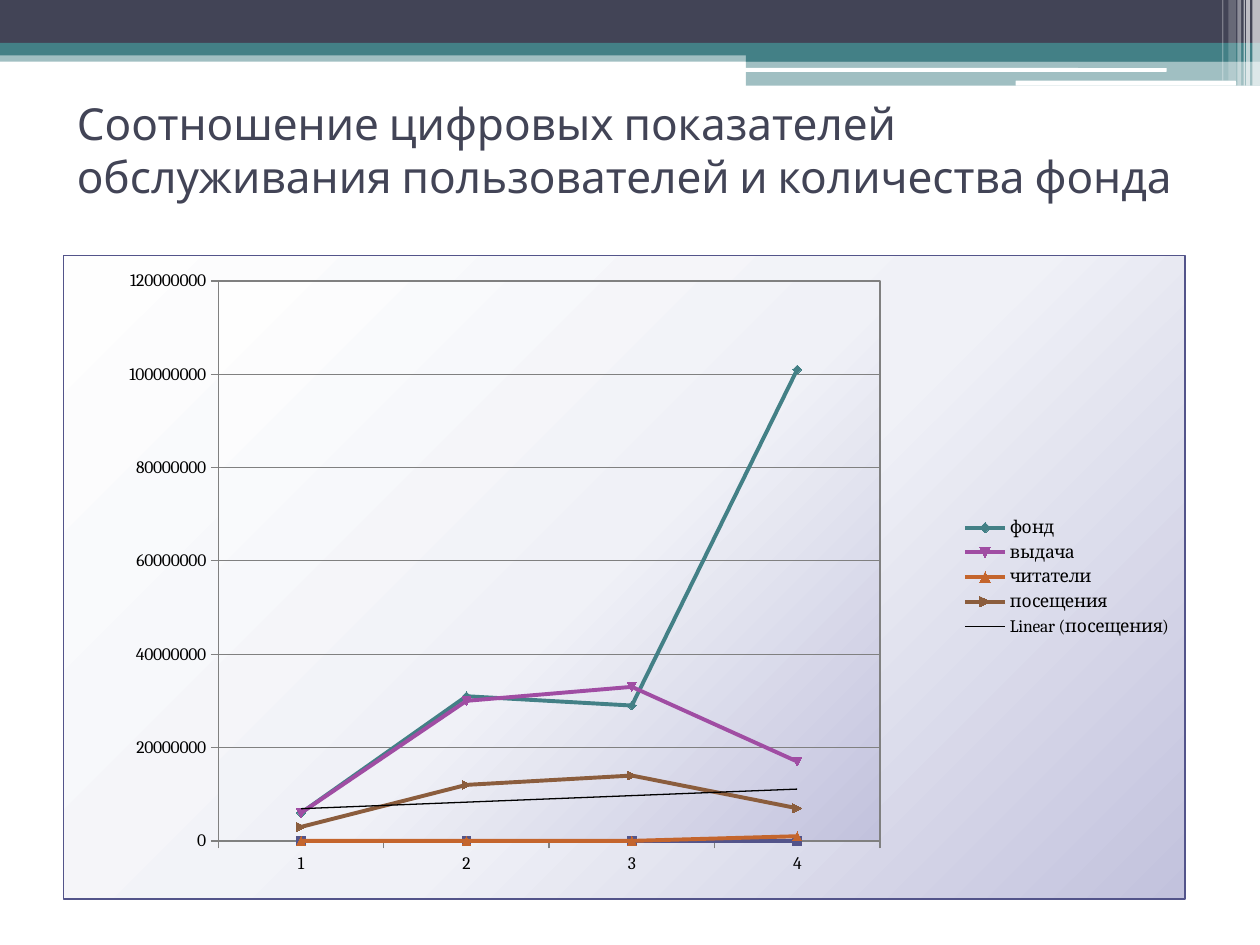
import pptx
import pptx.chart.data
import pptx.dml.color
import pptx.enum.chart
import pptx.enum.shapes
import pptx.enum.text
import pptx.oxml
import pptx.oxml.ns
import pptx.util
from pptx.util import Inches

NS = pptx.oxml.ns.nsdecls("a", "c")
qn = pptx.oxml.ns.qn


def rgb(hex_code):
    return pptx.dml.color.RGBColor.from_string(hex_code)


def write_text(frame, text, font="Cabin", size=25.2, color="424456"):
    frame.word_wrap = True
    frame.auto_size = pptx.enum.text.MSO_AUTO_SIZE.NONE
    frame.vertical_anchor = pptx.enum.text.MSO_ANCHOR.MIDDLE
    paragraph = frame.paragraphs[0]
    paragraph.alignment = pptx.enum.text.PP_ALIGN.LEFT
    run = paragraph.add_run()
    run.text = text
    run.font.name = font
    run.font.size = pptx.util.Pt(size)
    run.font.color.rgb = rgb(color)


presentation = pptx.Presentation()
presentation.slide_width = Inches(10)
presentation.slide_height = Inches(7.5)
slide = presentation.slides.add_slide(presentation.slide_layouts[5])

# Header bands and the light stripes at the right: box, colour, opacity, preset
RECT = pptx.enum.shapes.MSO_SHAPE.RECTANGLE
ROUND = pptx.enum.shapes.MSO_SHAPE.ROUNDED_RECTANGLE
bands = [
    (0, 0.4, 10, 0.09, "438086", 50, RECT),
    (0, 0, 10, 0.34, "424456", 100, RECT),
    (0, 0.34, 10, 0.1, "438086", 100, RECT),
    (5.92, 0.39, 4.08, 0.1, "438086", 100, RECT),
    (5.92, 0.48, 4.08, 0.2, "438086", 50, RECT),
    (5.91, 0.54, 3.35, 0.03, "FFFFFF", 100, ROUND),
    (8.06, 0.64, 1.75, 0.04, "FFFFFF", 100, ROUND),
]
stripes = [
    (9.94, 0.06, 0.68, 65), (9.89, 0.03, 0.68, 65), (9.87, 0.01, 0.68, 60),
    (9.82, 0.03, 0.68, 40), (9.75, 0.06, 0.64, 20), (9.7, 0.01, 0.64, 30),
]
bands += [(x, 0, w, h, "FFFFFF", opacity, RECT) for x, w, h, opacity in stripes]
for x, y, w, h, color, opacity, preset in bands:
    band = slide.shapes.add_shape(preset, Inches(x), Inches(y), Inches(w), Inches(h))
    band.shadow.inherit = False
    band.line.fill.background()
    band.fill.solid()
    band.fill.fore_color.rgb = rgb(color)
    if opacity < 100:
        color_node = band.fill._xPr.find(".//" + qn("a:srgbClr"))
        color_node.append(pptx.oxml.parse_xml(f'<a:alpha {NS} val="{opacity * 1000}"/>'))

# Title
title = slide.shapes.title
title.left, title.top = Inches(0.51), Inches(0.6)
title.width, title.height = Inches(9), Inches(1.17)
write_text(title.text_frame,
           "Соотношение цифровых показателей обслуживания пользователей и количества фонда")

# Chart data
indicators = [
    ("Series 1", (0, 0, 0, 0), "53548A"),
    ("фонд", (6000000, 31000000, 29000000, 101000000), "438086"),
    ("выдача", (6000000, 30000000, 33000000, 17000000), "A04DA3"),
    ("читатели", (0, 0, 0, 1000000), "C4652D"),
    ("посещения", (3000000, 12000000, 14000000, 7000000), "8B5D3D"),
]
data = pptx.chart.data.CategoryChartData()
data.categories = ["1", "2", "3", "4"]
for name, values, _ in indicators:
    data.add_series(name, values)
chart = slide.shapes.add_chart(
    pptx.enum.chart.XL_CHART_TYPE.LINE_MARKERS,
    Inches(0.5), Inches(2.02), Inches(8.91), Inches(5.12), data).chart
chart.has_title = False
chart.font.name = "Cambria"
chart.font.size = pptx.util.Pt(10)
chart.font.color.rgb = rgb("000000")
chart.plots[0].vary_by_categories = False

# Lines and markers
for series, (_, _, color) in zip(chart.plots[0].series, indicators):
    series.smooth = False
    series.format.line.width = pptx.util.Pt(2.25)
    series.format.line.color.rgb = rgb(color)
    series.marker.format.fill.solid()
    series.marker.format.fill.fore_color.rgb = rgb(color)
    series.marker.format.line.color.rgb = rgb(color)

# Linear trend of the last series, visits
visits = chart.plots[0].series[4]._element
visits.find(qn("c:cat")).addprevious(pptx.oxml.parse_xml(
    f'<c:trendline {NS}><c:spPr><a:ln w="9525"><a:solidFill><a:srgbClr val="000000"/>'
    '</a:solidFill></a:ln></c:spPr><c:trendlineType val="linear"/>'
    '<c:dispRSqr val="0"/><c:dispEq val="0"/></c:trendline>'))

# Axes
for axis in (chart.category_axis, chart.value_axis):
    axis.major_tick_mark = pptx.enum.chart.XL_TICK_MARK.OUTSIDE
    axis.minor_tick_mark = pptx.enum.chart.XL_TICK_MARK.NONE
    axis.format.line.color.rgb = rgb("808080")
chart.value_axis.minimum_scale = 0
chart.value_axis.maximum_scale = 120000000
chart.value_axis.major_unit = 20000000
chart.value_axis.has_major_gridlines = True
chart.value_axis.major_gridlines.format.line.color.rgb = rgb("808080")

# Legend without the first series and the trend
chart.has_legend = True
chart.legend.position = pptx.enum.chart.XL_LEGEND_POSITION.RIGHT
chart.legend.include_in_layout = False
legend_position = chart.legend._element.find(qn("c:legendPos"))
for index in (5, 0):
    legend_position.addnext(pptx.oxml.parse_xml(
        f'<c:legendEntry {NS}><c:idx val="{index}"/><c:delete val="1"/></c:legendEntry>'))

# Plot position
plot_area = chart._chartSpace.find(".//" + qn("c:plotArea"))
for layout in plot_area.findall(qn("c:layout")):
    plot_area.remove(layout)
plot_area.insert(0, pptx.oxml.parse_xml(
    f'<c:layout {NS}><c:manualLayout><c:layoutTarget val="inner"/>'
    '<c:xMode val="edge"/><c:yMode val="edge"/><c:x val="0.138"/><c:y val="0.04"/>'
    '<c:w val="0.59"/><c:h val="0.87"/></c:manualLayout></c:layout>'))

# The same gradient behind the chart and the plot
stops = "".join(f'<a:gs pos="{position * 1000}"><a:srgbClr val="{color}"/></a:gs>'
                for position, color in [(0, "FEFEFE"), (55, "F0F1F7"), (100, "C2C2DD")])
chart_node = chart._chartSpace.find(qn("c:chart"))
for add, border in ((chart_node.addnext, "53548A"), (plot_area.append, "808080")):
    add(pptx.oxml.parse_xml(
        f'<c:spPr {NS}><a:gradFill><a:gsLst>{stops}</a:gsLst><a:path path="circle">'
        '<a:fillToRect l="-40000" t="-90000" r="140000" b="190000"/></a:path></a:gradFill>'
        f'<a:ln w="9525"><a:solidFill><a:srgbClr val="{border}"/></a:solidFill></a:ln></c:spPr>'))

presentation.save("out.pptx")
